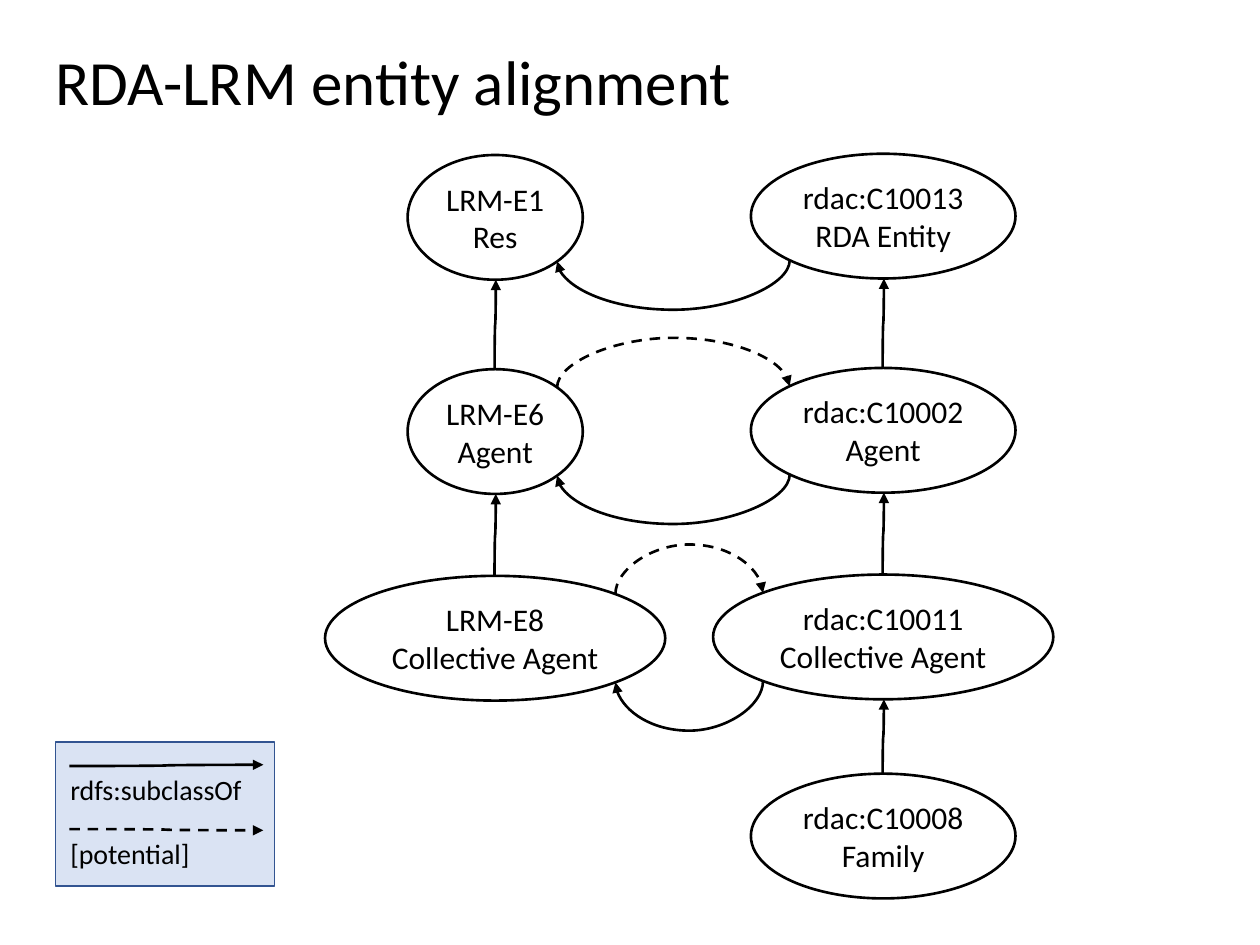
from typing import NamedTuple
from pptx import Presentation
from pptx.dml.color import RGBColor
from pptx.enum.dml import MSO_LINE as Dash
from pptx.enum.shapes import MSO_CONNECTOR as Conn, MSO_SHAPE as Form
from pptx.enum.text import MSO_ANCHOR as Anchor, PP_ALIGN as Align
from pptx.oxml.ns import qn
from pptx.util import Inches, Pt
from lxml.etree import SubElement as Sub

BLACK = RGBColor(0, 0, 0)
PALE = RGBColor(0xDA, 0xE3, 0xF3)
NAVY = RGBColor(0x32, 0x54, 0x91)
FONT = "Calibri"

WIDE, HIGH = 10, 7.5
COLS = (3.93, 7.01)               # column centres: LRM, RDA
ROWS = (1.22, 2.92, 4.56, 6.14)   # row tops
STEP = 0.01                       # the LRM column sits this much lower
TALL = 0.99                       # height of every ellipse
BULGE = 0.4                       # depth of the arcs
DIAG = 0.5 ** 0.5                 # ellipse corner, as a share of its radius


class Node(NamedTuple):
    col: int
    row: int
    width: float
    code: str
    name: str

    def site(self, dx: float, dy: float) -> tuple[float, float]:
        """Point at a share of the radii from the centre."""
        top = ROWS[self.row] + (STEP if self.col == 0 else 0)
        return COLS[self.col] + dx * self.width / 2, top + (1 + dy) * TALL / 2


class Link(NamedTuple):
    start: str
    end: str
    dashed: bool = False


NODES = {
    "res": Node(0, 0, 1.39, "LRM-E1", "Res"),
    "agent": Node(0, 1, 1.39, "LRM-E6", "Agent"),
    "group": Node(0, 2, 2.7, "LRM-E8", "Collective Agent"),
    "rda_top": Node(1, 0, 2.1, "rdac:C10013", "RDA Entity"),
    "rda_agent": Node(1, 1, 2.1, "rdac:C10002", "Agent"),
    "rda_group": Node(1, 2, 2.7, "rdac:C10011", "Collective Agent"),
    "rda_kin": Node(1, 3, 2.1, "rdac:C10008", "Family"),
}
RISES = [
    Link("agent", "res"), Link("group", "agent"),
    Link("rda_agent", "rda_top"), Link("rda_group", "rda_agent"),
    Link("rda_kin", "rda_group"),
]
ARCS = [
    Link("rda_top", "res"), Link("rda_agent", "agent"),
    Link("rda_group", "group"),
    Link("group", "rda_group", True), Link("agent", "rda_agent", True),
]


def write(frame, lines: list[str], size: int, align=Align.LEFT) -> None:
    for i, line in enumerate(lines):
        para = frame.paragraphs[0] if i == 0 else frame.add_paragraph()
        para.alignment = align
        run = para.add_run()
        run.text = line
        run.font.size, run.font.name = Pt(size), FONT
        run.font.color.rgb = BLACK


def label(shapes, box: tuple, text: str, size: int, wrap: bool) -> None:
    frame = shapes.add_textbox(*map(Inches, box)).text_frame
    frame.word_wrap = wrap
    write(frame, [text], size)


def arrow(shapes, start: tuple, end: tuple, dashed: bool):
    cxn = shapes.add_connector(Conn.CURVE, *map(Inches, (*start, *end)))
    cxn.line.color.rgb, cxn.line.width = BLACK, Pt(1.5)
    if dashed:
        cxn.line.dash_style = Dash.DASH
    Sub(cxn.line._get_or_add_ln(), qn("a:tailEnd"), type="triangle")
    Sub(cxn._element.spPr, qn("a:effectLst"))
    return cxn


def turn(cxn, start: tuple, end: tuple, bend: float) -> None:
    """Make a curve leave and arrive vertically, by a quarter turn."""
    (x1, y1), (x2, y2) = start, end
    run, span = abs(y2 - y1), max(abs(x2 - x1), STEP)
    cxn.left = Inches((x1 + x2 - run) / 2)
    cxn.top = Inches((y1 + y2 - span) / 2)
    cxn.width, cxn.height = Inches(run), Inches(span)
    up = y2 < y1
    form = cxn._element.spPr.find(qn("a:xfrm"))
    for flip in ("flipH", "flipV"):
        form.attrib.pop(flip, None)
    form.set("rot", str((270 if up else 90) * 60000))
    if (x2 < x1) if up else (x2 > x1):
        form.set("flipV", "1")
    geom = cxn._element.spPr.find(qn("a:prstGeom"))
    guides = geom.find(qn("a:avLst"))
    if guides is None:
        guides = Sub(geom, qn("a:avLst"))
    Sub(guides, qn("a:gd"), name="adj1", fmla=f"val {round(bend * 100000)}")


def oval(shapes, node: Node) -> None:
    x, y = node.site(-1, -1)
    shape = shapes.add_shape(
        Form.OVAL, *map(Inches, (x, y, node.width, TALL)))
    shape.shadow.inherit = False
    shape.fill.background()
    shape.line.color.rgb, shape.line.width = BLACK, Pt(1.5)
    frame = shape.text_frame
    frame.word_wrap, frame.vertical_anchor = False, Anchor.MIDDLE
    write(frame, [node.code, node.name], 18, Align.CENTER)


def legend(shapes) -> None:
    parts = shapes.add_group_shape().shapes
    box = parts.add_shape(Form.RECTANGLE, *map(Inches, (0.44, 5.89, 1.74, 1.14)))
    box.shadow.inherit = False
    box.fill.solid()
    box.fill.fore_color.rgb = PALE
    box.line.color.rgb, box.line.width = NAVY, Pt(1)
    keys = [("rdfs:subclassOf", 1.58, False), ("[potential]", 1.16, True)]
    for i, (text, width, dashed) in enumerate(keys):
        y = 6.07 + i * 0.51
        ends = (y, y + STEP) if dashed else (y + STEP, y)
        arrow(parts, (0.55, ends[0]), (2.09, ends[1]), dashed)
        label(parts, (0.46, y + STEP, width, 0.37), text, 16, True)


def main() -> None:
    deck = Presentation()
    deck.slide_width, deck.slide_height = Inches(WIDE), Inches(HIGH)
    shapes = deck.slides.add_slide(deck.slide_layouts[6]).shapes

    # Title and entities
    label(shapes, (0.34, 0.29, 5.62, 0.71), "RDA-LRM entity alignment", 36, False)
    for node in NODES.values():
        oval(shapes, node)

    # Subclass arrows within a column
    for link in RISES:
        start = NODES[link.start].site(0, -1)
        end = NODES[link.end].site(0, 1)
        turn(arrow(shapes, start, end, link.dashed), start, end, 0.5)

    # Arcs between columns: solid ones sag, dashed ones rise
    for link in ARCS:
        side, edge = (DIAG, -DIAG) if link.dashed else (-DIAG, DIAG)
        start = NODES[link.start].site(side, edge)
        end = NODES[link.end].site(-side, edge)
        turn(arrow(shapes, start, end, link.dashed), start, end, BULGE / STEP)

    legend(shapes)
    deck.save("out.pptx")


if __name__ == "__main__":
    main()
